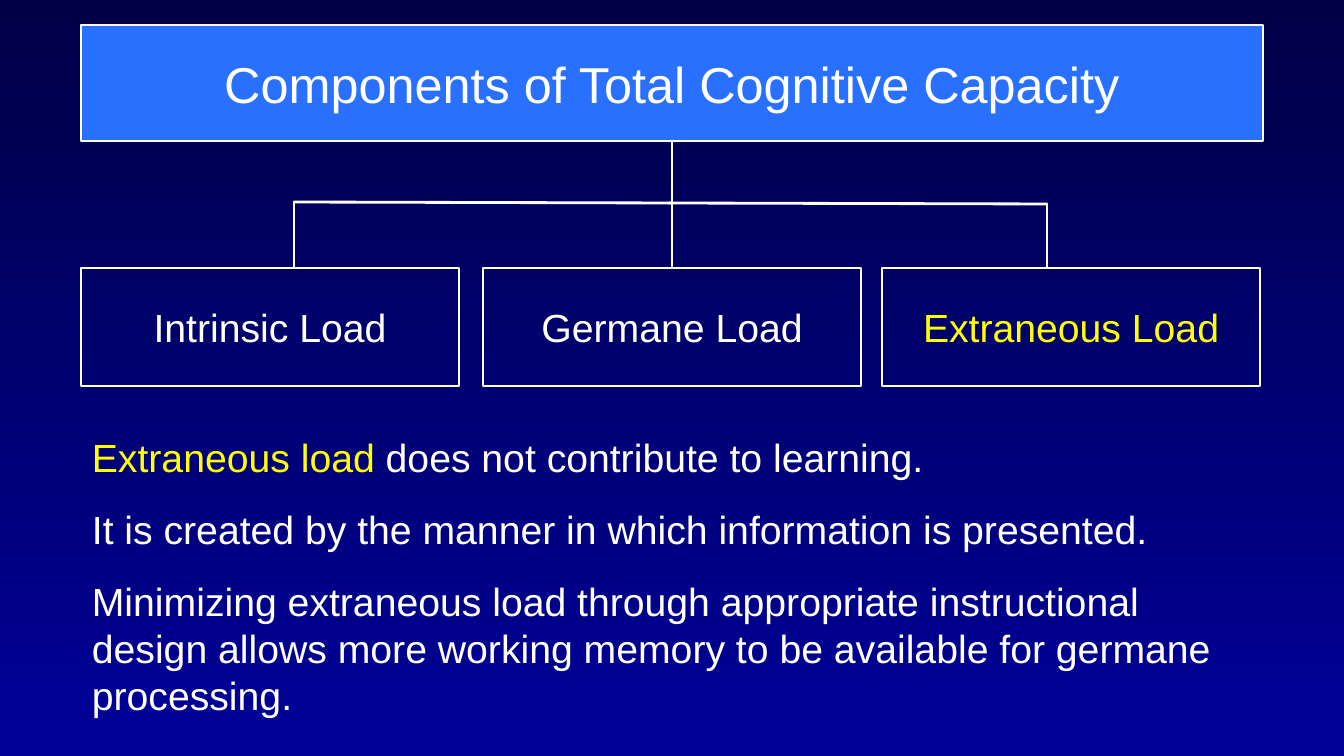
import pptx
import pptx.util
import pptx.dml.color
import pptx.enum.shapes
import pptx.enum.text
import pptx.oxml.ns
import lxml.etree

PX = 914400 / 100.8
COLORS = {
    "top": "000047",
    "bottom": "000099",
    "banner": "2970FF",
    "white": "FFFFFF",
    "accent": "FFFF00",
}


def px(*lengths):
    return [pptx.util.Emu(round(length * PX)) for length in lengths]


def add_text(paragraph, text, size=28, color="white"):
    run = paragraph.add_run()
    run.text = text
    run.font.name = "Arial"
    run.font.size = pptx.util.Pt(size)
    run.font.color.rgb = pptx.dml.color.RGBColor.from_string(COLORS[color])


deck = pptx.Presentation()
deck.slide_width, deck.slide_height = px(1344, 756)
slide = deck.slides.add_slide(deck.slide_layouts[6])

backdrop = slide.background.fill
backdrop.gradient()
backdrop.gradient_angle = 270
for stop, position, color in zip(backdrop.gradient_stops, (0, 1), ("top", "bottom")):
    stop.position = position
    stop.color.rgb = pptx.dml.color.RGBColor.from_string(COLORS[color])

explanation = slide.shapes.add_textbox(*px(82, 428, 1182, 298)).text_frame
explanation.word_wrap = True
statements = [
    [("Extraneous load ", "accent"), ("does not contribute to learning.", "white")],
    [("It is created by the manner in which information is presented.", "white")],
    [("Minimizing extraneous load through appropriate instructional design allows "
      "more working memory to be available for germane processing.", "white")],
]
for index, statement in enumerate(statements):
    paragraph = explanation.add_paragraph() if index else explanation.paragraphs[0]
    paragraph.space_before = pptx.util.Pt(18)
    for text, color in statement:
        add_text(paragraph, text, color=color)

boxes = [
    ("Components of Total Cognitive Capacity", (81, 25, 1182, 116), 36, "white", "banner"),
    ("Intrinsic Load", (81, 268, 378, 118), 28, "white", None),
    ("Germane Load", (483, 268, 378, 118), 28, "white", None),
    ("Extraneous Load", (882, 268, 378, 118), 28, "accent", None),
]
for label, bounds, size, color, fill in boxes:
    box = slide.shapes.add_shape(pptx.enum.shapes.MSO_SHAPE.RECTANGLE, *px(*bounds))
    box.shadow.inherit = False
    if fill:
        box.fill.solid()
        box.fill.fore_color.rgb = pptx.dml.color.RGBColor.from_string(COLORS[fill])
    else:
        box.fill.background()
    box.line.color.rgb = pptx.dml.color.RGBColor.from_string(COLORS["white"])
    box.line.width = pptx.util.Pt(2)
    box.text_frame.word_wrap = True
    box.text_frame.vertical_anchor = pptx.enum.text.MSO_ANCHOR.MIDDLE
    heading = box.text_frame.paragraphs[0]
    heading.alignment = pptx.enum.text.PP_ALIGN.CENTER
    add_text(heading, label, size=size, color=color)

branches = [
    (672, 141, 672, 268),
    (294, 202, 672, 203),
    (669, 203, 1047, 204),
    (294, 201, 294, 268),
    (1047, 203, 1047, 268),
]
for ends in branches:
    branch = slide.shapes.add_connector(pptx.enum.shapes.MSO_CONNECTOR.STRAIGHT, *px(*ends))
    branch.line.color.rgb = pptx.dml.color.RGBColor.from_string(COLORS["white"])
    branch.line.width = pptx.util.Pt(2)
    lxml.etree.SubElement(branch.element.spPr, pptx.oxml.ns.qn("a:effectLst"))

deck.save("out.pptx")
